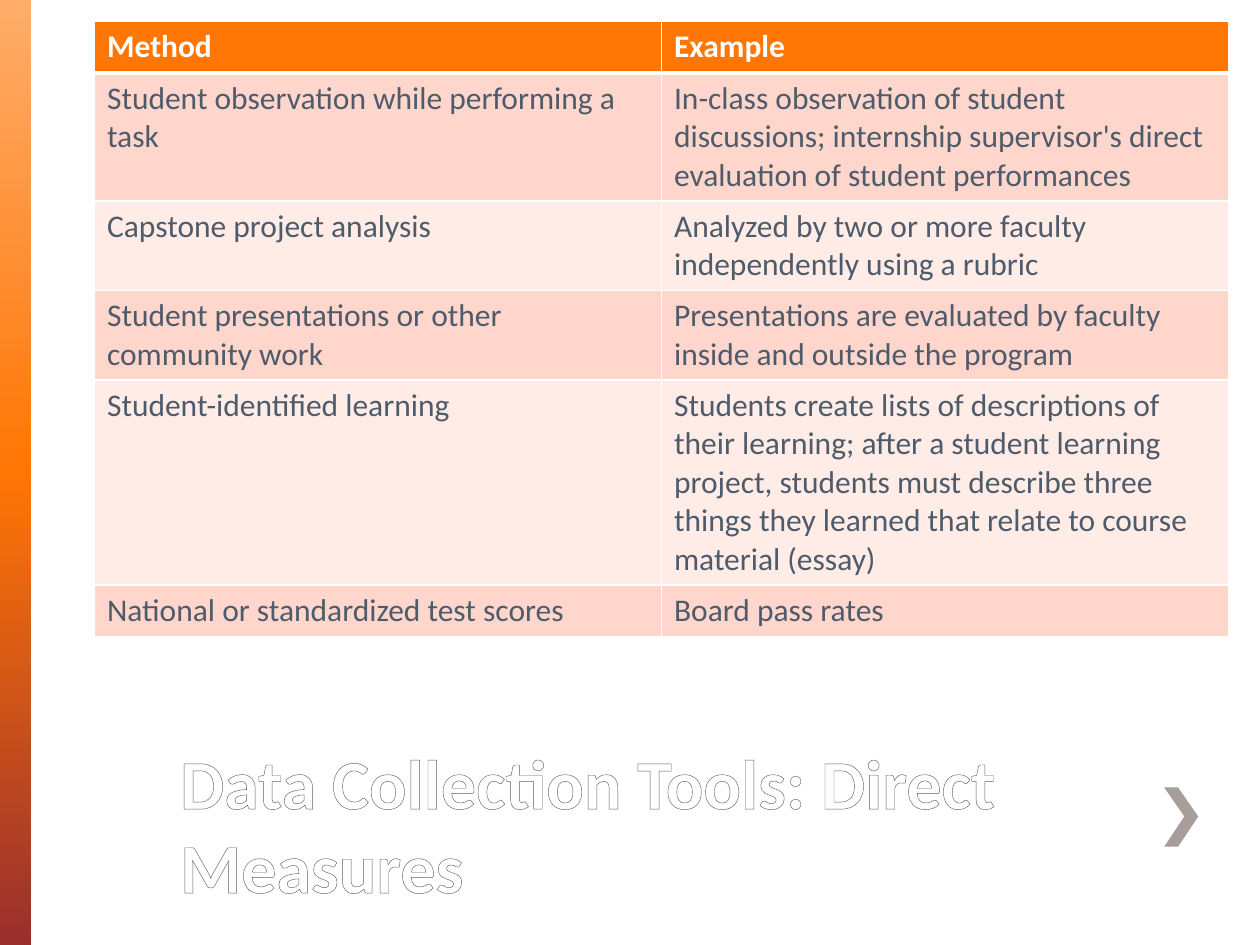
from copy import deepcopy

from lxml import etree
from pptx import Presentation
from pptx.dml.color import RGBColor
from pptx.enum.shapes import MSO_SHAPE
from pptx.enum.text import MSO_ANCHOR, MSO_AUTO_SIZE, PP_ALIGN
from pptx.oxml.ns import qn
from pptx.util import Pt

PX = 9144  # EMU per px, 100 px to the inch
RECTANGLE = MSO_SHAPE.RECTANGLE
BOTTOM = MSO_ANCHOR.BOTTOM
LEFT = PP_ALIGN.LEFT
NO_AUTOFIT = MSO_AUTO_SIZE.NONE
TITLE_ONLY = 5

FONT = "Calibri"
COLORS = {
    "white": "FFFFFF",
    "peach": "FFAD69",
    "orange": "FF7605",
    "brick": "9A2F2C",
    "chevron": "A79D99",
    "outline": "675D59",
    "text": "4D5B6B",
    "band_dark": "FFD6CC",
    "band_light": "FFECE7",
}

METHODS = [
    ("Method", "Example"),
    ("Student observation while performing a task",
     "In-class observation of student discussions; internship supervisor's "
     "direct evaluation of student performances"),
    ("Capstone project analysis",
     "Analyzed by two or more faculty independently using a rubric"),
    ("Student presentations or other community work",
     "Presentations are evaluated by faculty inside and outside the program"),
    ("Student-identified learning",
     "Students create lists of descriptions of their learning; after a "
     "student learning project, students must describe three things they "
     "learned that relate to course material (essay)"),
    ("National or standardized test scores", "Board pass rates"),
]


def rgb(name):
    return RGBColor.from_string(COLORS[name])


def emu(box):
    return [length * PX for length in box]


def format_text(text_frame, size, color, bold):
    for paragraph in text_frame.paragraphs:
        paragraph.alignment = LEFT
        for run in paragraph.runs:
            run.font.name = FONT
            run.font.size = Pt(size)
            run.font.bold = bold
            run.font.color.rgb = rgb(color)


def line_element(tag, color, points):
    line = etree.Element(qn(tag), w=str(Pt(points)))
    fill = etree.SubElement(line, qn("a:solidFill"))
    etree.SubElement(fill, qn("a:srgbClr"), val=COLORS[color])
    return line


def add_side_band(slide, box):
    band = slide.shapes.add_shape(RECTANGLE, *emu(box))
    band.shadow.inherit = False
    band.line.fill.background()
    band.fill.gradient()
    band.fill.gradient_angle = 270
    stops = band._element.spPr.find(".//" + qn("a:gsLst"))
    stops.append(deepcopy(stops[0]))
    shades = [("peach", 0), ("orange", 0.5), ("brick", 1)]
    for stop, (color, position) in zip(band.fill.gradient_stops, shades):
        stop.color.rgb = rgb(color)
        stop.position = position


def add_chevron(slide, box):
    left, top, width, height = box
    arm = 11
    tip_y = top + height / 2
    builder = slide.shapes.build_freeform(left + arm, top, scale=PX)
    builder.add_line_segments([
        (left, top),
        (left + width - arm, tip_y),
        (left, top + height),
        (left + arm, top + height),
        (left + width, tip_y),
    ])
    chevron = builder.convert_to_shape()
    chevron.shadow.inherit = False
    chevron.line.fill.background()
    chevron.fill.solid()
    chevron.fill.fore_color.rgb = rgb("chevron")


def place_title(slide, box):
    title = slide.shapes.title
    title.left, title.top, title.width, title.height = emu(box)
    frame = title.text_frame
    frame.text = "Data Collection Tools: Direct Measures"
    frame.word_wrap = True
    frame.auto_size = NO_AUTOFIT
    frame.vertical_anchor = BOTTOM
    format_text(frame, 40, "white", True)
    for run in frame.paragraphs[0].runs:
        run._r.get_or_add_rPr().insert(0, line_element("a:ln", "outline", 1))


def set_borders(cell, top, bottom):
    widths = [("a:lnL", 1), ("a:lnR", 1), ("a:lnT", top), ("a:lnB", bottom)]
    properties = cell._tc.get_or_add_tcPr()
    for index, (tag, points) in enumerate(widths):
        properties.insert(index, line_element(tag, "white", points))


def add_methods_table(slide, box):
    """Rows start at one line of text and grow with their wording."""
    frame = slide.shapes.add_table(len(METHODS), len(METHODS[0]), *emu(box))
    table = frame.table
    for row_index, wording in enumerate(METHODS):
        header = row_index == 0
        band = "band_dark" if row_index % 2 else "band_light"
        table.rows[row_index].height = 41 * PX
        for cell, text in zip(table.rows[row_index].cells, wording):
            cell.text_frame.text = text
            format_text(cell.text_frame, 18,
                        "white" if header else "text", header)
            cell.fill.solid()
            cell.fill.fore_color.rgb = rgb("orange" if header else band)
            set_borders(cell, top=3 if row_index == 1 else 1,
                        bottom=3 if header else 1)
    frame.height = box[3] * PX


def main():
    presentation = Presentation()
    presentation.slide_width = 1000 * PX
    presentation.slide_height = 750 * PX
    slide = presentation.slides.add_slide(
        presentation.slide_layouts[TITLE_ONLY])
    add_side_band(slide, (0, 0, 25, 750))
    add_chevron(slide, (924, 625, 27, 47))
    place_title(slide, (133, 517, 792, 208))
    add_methods_table(slide, (75, 17, 900, 481))
    presentation.save("out.pptx")


if __name__ == "__main__":
    main()
